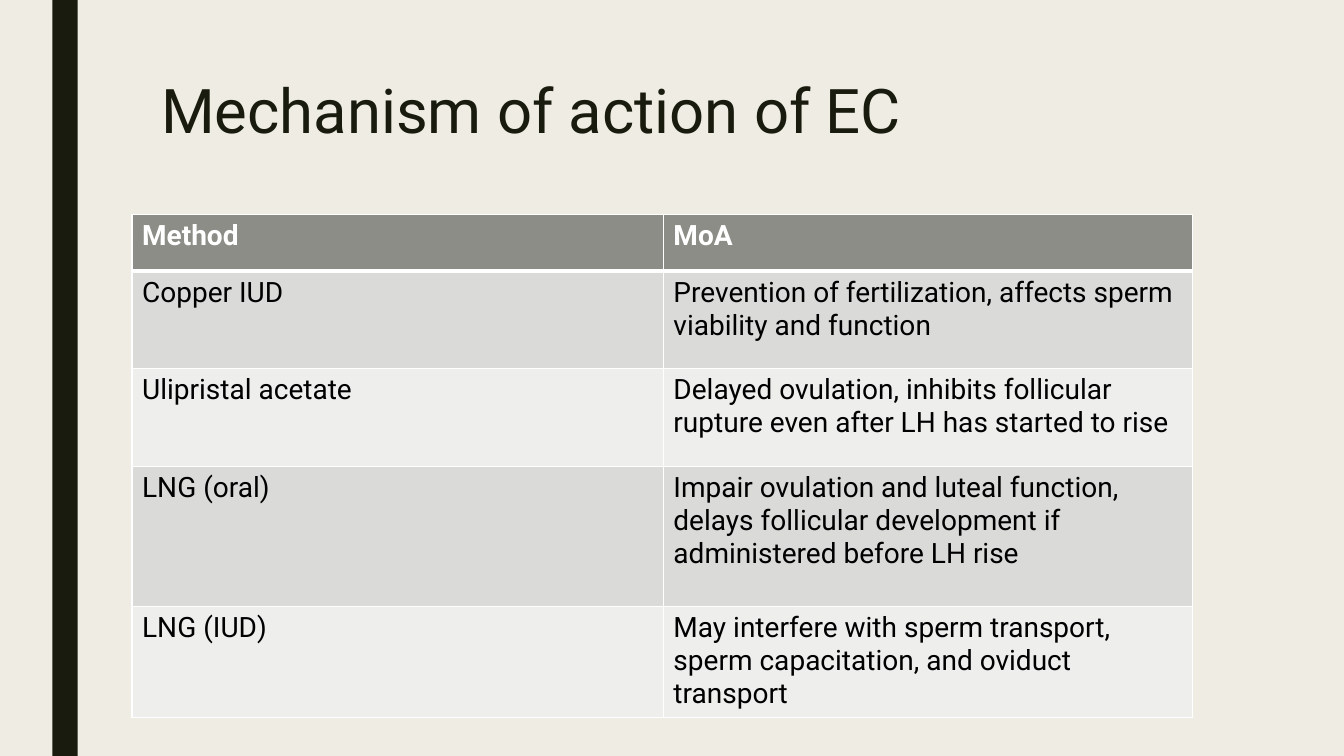
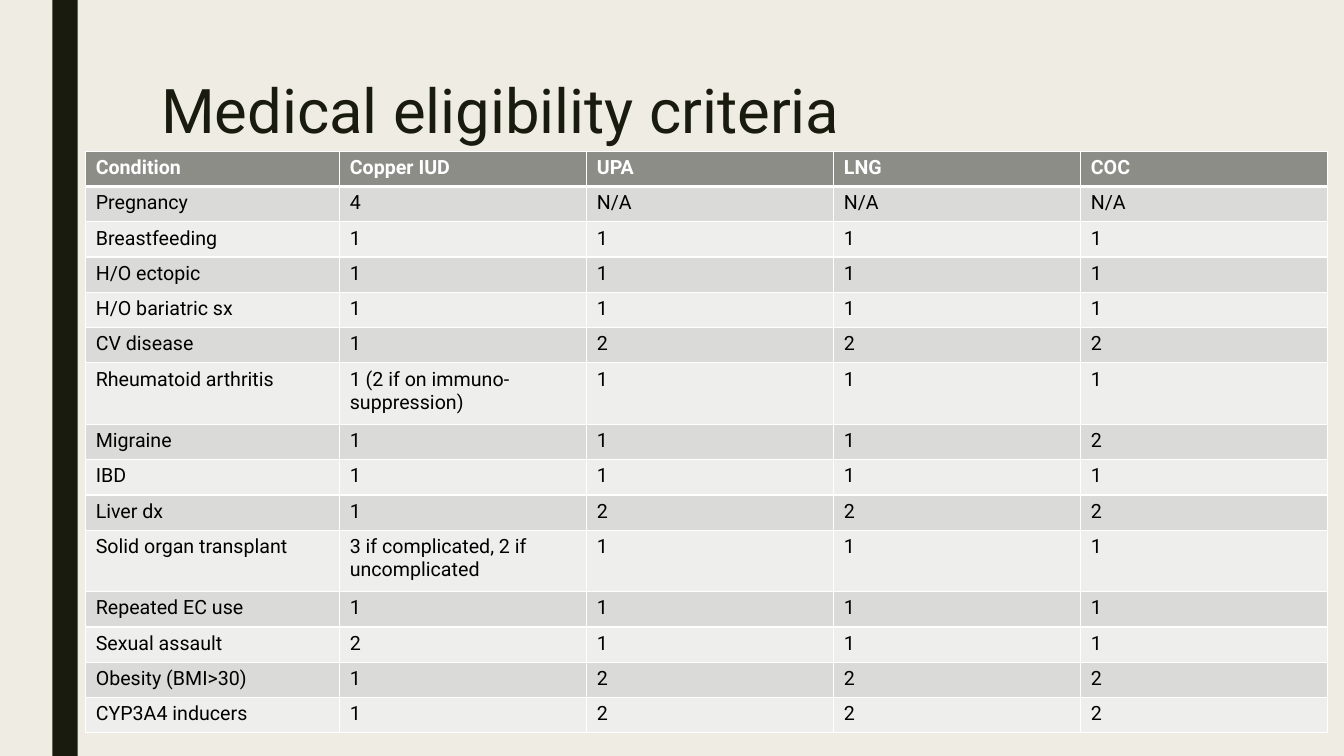
from pptx import Presentation
from pptx import util as u
from pptx.dml.color import RGBColor
from pptx.enum import shapes, text
from pptx.oxml import parse_xml
from pptx.oxml.ns import nsdecls


def color(code):
    return RGBColor.from_string(code)


class Deck:
    font = "Roboto"
    paper, ink = "EFEDE3", "191B0E"
    white, black = "FFFFFF", "000000"
    head, odd, even = "8C8D86", "DADBD9", "EEEEED"

    def __init__(self):
        self.prs = Presentation()
        self.prs.slide_width = u.Inches(13.33)
        self.prs.slide_height = u.Inches(7.5)
        self.slide = None

    def style(self, para, size, code, bold=False):
        para.font.name = self.font
        para.font.size = u.Pt(size)
        para.font.bold = bold
        para.font.color.rgb = color(code)

    def page(self, title):
        self.slide = self.prs.slides.add_slide(self.prs.slide_layouts[6])
        fill = self.slide.background.fill
        fill.solid()
        fill.fore_color.rgb = color(self.paper)
        self.band()
        self.title(title)

    def band(self):
        bar = self.slide.shapes.add_shape(
            shapes.MSO_SHAPE.RECTANGLE,
            u.Inches(0.52), 0, u.Inches(0.25), self.prs.slide_height)
        bar.shadow.inherit = False
        bar.fill.solid()
        bar.fill.fore_color.rgb = color(self.ink)
        bar.line.fill.background()

    def title(self, words):
        box = self.slide.shapes.add_textbox(
            u.Inches(1.5), u.Inches(0.75), u.Inches(10.5), u.Inches(1.62))
        frame = box.text_frame
        frame.word_wrap = True
        frame.vertical_anchor = text.MSO_ANCHOR.TOP
        para = frame.paragraphs[0]
        para.text = words
        para.line_spacing = 0.89
        self.style(para, 44, self.ink)

    def edges(self, cell, row):
        props = cell._tc.get_or_add_tcPr()
        thick = {"T": row == 1, "B": row == 0}
        for side in "LRTB":
            width = u.Pt(3 if thick.get(side) else 1)
            props.append(parse_xml(
                f'<a:ln{side} {nsdecls("a")} w="{width}"><a:solidFill>'
                f'<a:srgbClr val="{self.white}"/></a:solidFill></a:ln{side}>'))

    def cell(self, cell, words, row, size):
        self.edges(cell, row)
        shade = self.head if row == 0 else self.odd if row % 2 else self.even
        cell.fill.solid()
        cell.fill.fore_color.rgb = color(shade)
        para = cell.text_frame.paragraphs[0]
        para.text = words
        self.style(para, size, self.black if row else self.white, row == 0)

    def table(self, left, top, widths, heights, rows, size):
        grid = self.slide.shapes.add_table(
            len(rows), len(widths), u.Inches(left), u.Inches(top),
            u.Inches(sum(widths)), u.Inches(sum(heights))).table
        for col, width in zip(grid.columns, widths):
            col.width = u.Inches(width)
        for r, (line, height) in enumerate(zip(rows, heights)):
            grid.rows[r].height = u.Inches(height)
            for c, words in enumerate(line):
                self.cell(grid.cell(r, c), words, r, size)


METHODS = [
    ("Method", "MoA"),
    ("Copper IUD",
     "Prevention of fertilization, affects sperm viability and function"),
    ("Ulipristal acetate",
     "Delayed ovulation, inhibits follicular rupture even after LH has "
     "started to rise"),
    ("LNG (oral)",
     "Impair ovulation and luteal function, delays follicular development "
     "if administered before LH rise"),
    ("LNG (IUD)",
     "May interfere with sperm transport, sperm capacitation, and oviduct "
     "transport"),
]

CRITERIA = [
    ("Condition", "Copper IUD", "UPA", "LNG", "COC"),
    ("Pregnancy", "4", "N/A", "N/A", "N/A"),
    ("Breastfeeding", "1", "1", "1", "1"),
    ("H/O ectopic", "1", "1", "1", "1"),
    ("H/O bariatric sx", "1", "1", "1", "1"),
    ("CV disease", "1", "2", "2", "2"),
    ("Rheumatoid arthritis", "1 (2 if on immuno-suppression)", "1", "1", "1"),
    ("Migraine", "1", "1", "1", "2"),
    ("IBD", "1", "1", "1", "1"),
    ("Liver dx", "1", "2", "2", "2"),
    ("Solid organ transplant", "3 if complicated, 2 if uncomplicated",
     "1", "1", "1"),
    ("Repeated EC use", "1", "1", "1", "1"),
    ("Sexual assault", "2", "1", "1", "1"),
    ("Obesity (BMI>30)", "1", "2", "2", "2"),
    ("CYP3A4 inducers", "1", "2", "2", "2"),
]


def main():
    deck = Deck()
    deck.page("Mechanism of action of EC")
    deck.table(1.31, 2.13, [5.27, 5.25], [0.56, 0.97, 0.97, 1.39, 1.08],
               METHODS, 20)

    deck.page("Medical eligibility criteria")
    heights = [0.61 if len(row[1]) > 20 else 0.35 for row in CRITERIA]
    deck.table(0.85, 1.5, [2.52] + [2.45] * 4, heights, CRITERIA, 14)
    deck.prs.save("out.pptx")


if __name__ == "__main__":
    main()
